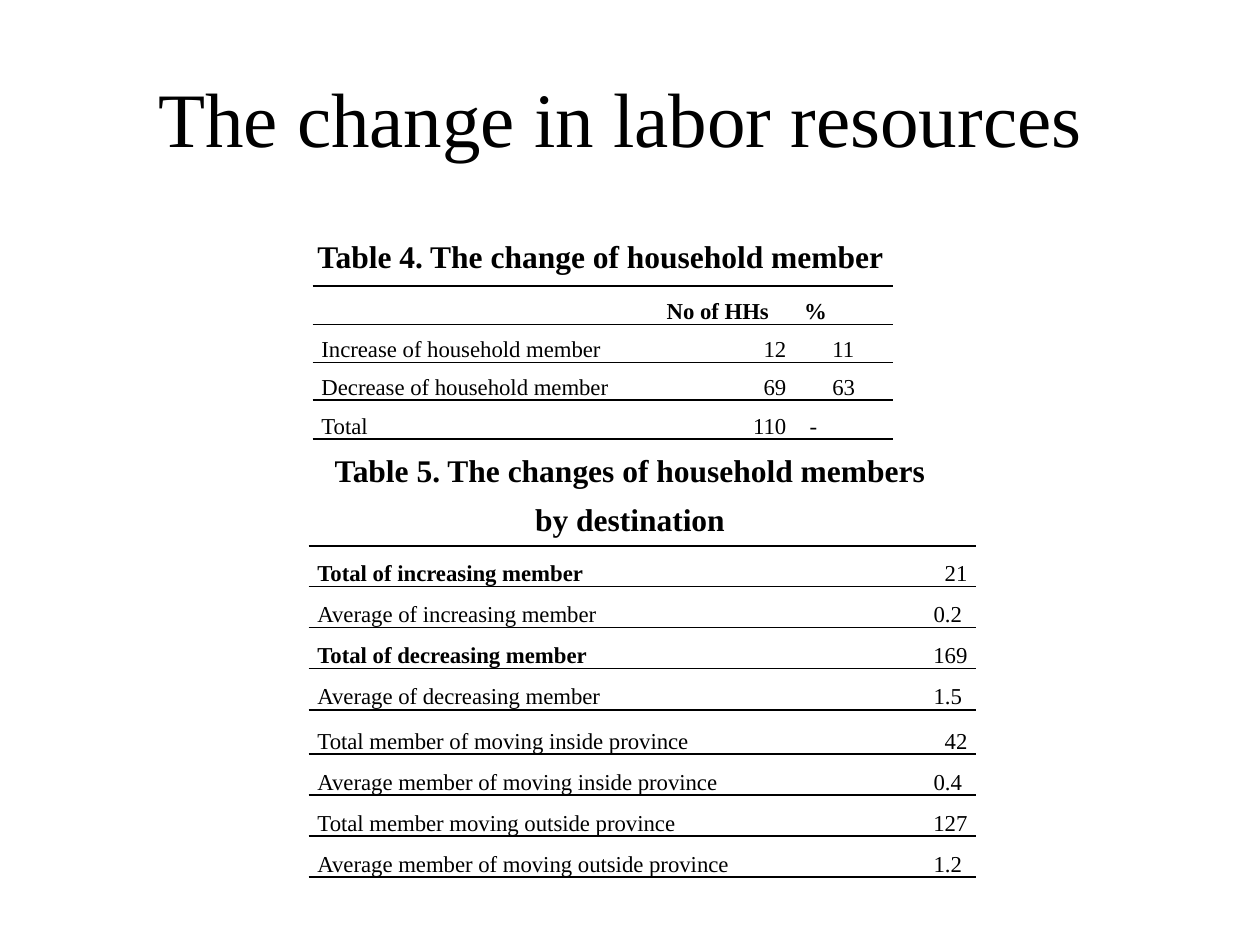
from lxml import etree
from pptx import Presentation
from pptx.dml.color import RGBColor
from pptx.enum.text import MSO_ANCHOR, MSO_AUTO_SIZE, PP_ALIGN
from pptx.oxml.ns import qn
from pptx.util import Cm, Pt

LEFT, CENTER, RIGHT = PP_ALIGN.LEFT, PP_ALIGN.CENTER, PP_ALIGN.RIGHT
MIDDLE, BOTTOM = MSO_ANCHOR.MIDDLE, MSO_ANCHOR.BOTTOM
GROW = MSO_AUTO_SIZE.SHAPE_TO_FIT_TEXT

COLORS = {"text": "000000", "rule": "000000"}
FONT = "Times New Roman"
CELL_MARGIN = 0.18

HOUSEHOLD_ROWS = [
    ["", "No of HHs", "%"],
    ["Increase of household member", "12", "11"],
    ["Decrease of household member", "69", "63"],
    ["Total", "110", "-"],
]
DESTINATION_ROWS = [
    ["Total of increasing member", "21"],
    ["Average of increasing member", "0.2"],
    ["Total of decreasing member", "169"],
    ["Average of decreasing member", "1.5"],
    ["Total member of moving inside province", "42"],
    ["Average member of moving inside province", "0.4"],
    ["Total member moving outside province", "127"],
    ["Average member of moving outside province", "1.2"],
]


def write(frame, text, size, bold=False, align=LEFT, spacing=None, before=None):
    paragraph = frame.paragraphs[0]
    paragraph.alignment = align
    paragraph.line_spacing = spacing
    if before is not None:
        paragraph.space_before = Pt(before)
    run = paragraph.add_run()
    run.text = text
    run.font.name = FONT
    run.font.size = Pt(size)
    run.font.bold = bold
    run.font.color.rgb = RGBColor.from_string(COLORS["text"])


def add_title(slide, text):
    title = slide.shapes.title
    title.left, title.top = Cm(1.27), Cm(0.76)
    title.width, title.height = Cm(22.86), Cm(3.18)
    title.text_frame.vertical_anchor = MIDDLE
    write(title.text_frame, text, 44, align=CENTER)


def add_caption(slide, text, left, top, width, height, wrap=True, **text_format):
    box = slide.shapes.add_textbox(Cm(left), Cm(top), Cm(width), Cm(height))
    box.text_frame.word_wrap = wrap
    box.text_frame.auto_size = GROW
    write(box.text_frame, text, 18, bold=True, **text_format)


def set_borders(cell, top, bottom):
    """Rule the cell above and below, with widths in points, and clear its sides."""
    properties = cell._tc.get_or_add_tcPr()
    for tag, width in (("lnL", 0), ("lnR", 0), ("lnT", top), ("lnB", bottom)):
        line = etree.SubElement(properties, qn(f"a:{tag}"), w=str(Pt(width)))
        if width:
            fill = etree.SubElement(line, qn("a:solidFill"))
            etree.SubElement(fill, qn("a:srgbClr"), val=COLORS["rule"])
        else:
            etree.SubElement(line, qn("a:noFill"))


def add_ruled_table(slide, rows, left, top, widths, heights, cell_format):
    """cell_format(row, column) gives (bold, align, left indent, right indent)."""
    frame = slide.shapes.add_table(len(rows), len(widths), Cm(left), Cm(top),
                                   Cm(sum(widths)), Cm(sum(heights)))
    table = frame.table
    table.first_row = table.horz_banding = False
    for column, width in zip(table.columns, widths):
        column.width = Cm(width)
    last = len(rows) - 1
    for r, (values, height) in enumerate(zip(rows, heights)):
        table.rows[r].height = Cm(height)
        for c, value in enumerate(values):
            cell = table.cell(r, c)
            bold, align, indent_left, indent_right = cell_format(r, c)
            cell.margin_left = Cm(CELL_MARGIN + indent_left)
            cell.margin_right = Cm(CELL_MARGIN + indent_right)
            cell.margin_top = cell.margin_bottom = 0
            cell.vertical_anchor = BOTTOM
            set_borders(cell, 1.5 if r == 0 else 1, 1.5 if r == last else 1)
            cell.fill.background()
            if value:
                write(cell.text_frame, value, 13, bold=bold, align=align,
                      spacing=1.5, before=3)


def household_format(row, column):
    header = row == 0
    align = RIGHT if column == 1 and not header else LEFT
    percent_indents = [0, 0.57, 0.57, 0.11]
    return header, align, percent_indents[row] if column == 2 else 0, 0


def destination_format(row, column):
    bold = column == 0 and row in (0, 2)
    is_average = row % 2 == 1
    return bold, RIGHT if column else LEFT, 0, 0.11 if column and is_average else 0


def main():
    prs = Presentation()
    prs.slide_width, prs.slide_height = Cm(25.4), Cm(19.05)
    slide = prs.slides.add_slide(prs.slide_layouts[5])
    add_title(slide, "The change in labor resources ")
    add_ruled_table(slide, HOUSEHOLD_ROWS, 6.3, 5.77, [6.96, 2.77, 1.98],
                    [0.64, 0.71, 0.76, 0.79], household_format)
    add_caption(slide, "Table 4. The change of household member",
                6.15, 4.65, 12.04, 1.02, wrap=False)
    add_ruled_table(slide, DESTINATION_ROWS, 6.22, 11, [11.33, 2.13],
                    [0.61, 0.69, 0.74, 0.76, 0.89, 0.69, 0.76, 0.64],
                    destination_format)
    add_caption(slide, "Table 5. The changes of household members by destination",
                6.35, 8.74, 12.7, 2.26, align=CENTER, spacing=1.3)
    prs.save("out.pptx")


if __name__ == "__main__":
    main()
